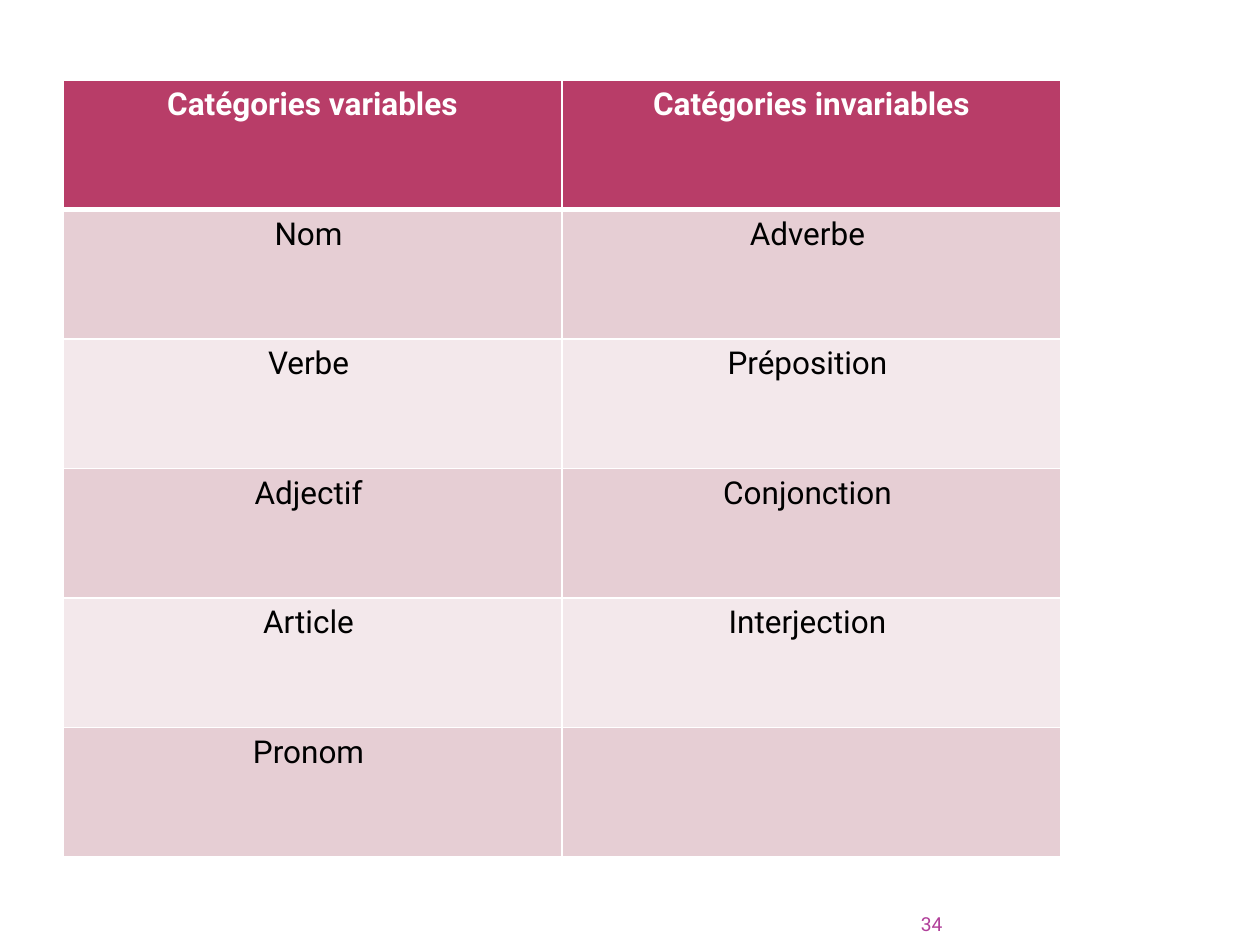
from dataclasses import dataclass

from lxml.etree import SubElement
from pptx import Presentation
from pptx.dml.color import RGBColor
from pptx.enum.text import MSO_ANCHOR, PP_ALIGN
from pptx.oxml.ns import qn
from pptx.util import Inches, Pt

# Content
HEADINGS = ("Catégories variables", "Catégories invariables")
WORDS = [
    ("Nom ", "Adverbe "),
    ("Verbe ", "Préposition "),
    ("Adjectif ", "Conjonction "),
    ("Article ", "Interjection "),
    ("Pronom ", ""),
]
PAGE_NUMBER = "34"


@dataclass(frozen=True)
class Theme:
    font: str = "Roboto"
    header: str = "B83D68"
    bands: tuple = ("E6CED4", "F3E8EB")
    light: str = "FFFFFF"
    dark: str = "000000"
    number: str = "B13F9A"
    table_size: int = 18
    number_size: int = 11
    thin: int = 1
    thick: int = 3


THEME = Theme()

# Layout, in inches
SLIDE_SIZE = (10, 7.5)
TABLE_BOX = (0.5, 0.635, 7.92, 6.17)
NUMBER_BOX = (6.84, 7.17, 0.64, 0.25)


def write(frame, text, align, color, **font_format):
    """Put one formatted line in a text frame."""
    para = frame.paragraphs[0]
    para.alignment = align
    span = para.add_run()
    span.text = text
    span.font.color.rgb = RGBColor.from_string(color)
    for name, value in {"name": THEME.font, **font_format}.items():
        setattr(span.font, name, value)


def set_borders(cell, widths):
    """Draw the cell's edges; widths maps an edge tag to points."""
    properties = cell._tc.get_or_add_tcPr()
    for tag, width in widths.items():
        line = SubElement(properties, qn(f"a:{tag}"), w=str(Pt(width)))
        fill = SubElement(line, qn("a:solidFill"))
        SubElement(fill, qn("a:srgbClr"), val=THEME.light)


def add_category_table(page):
    rows = [HEADINGS, *WORDS]
    box = [Inches(length) for length in TABLE_BOX]
    table = page.shapes.add_table(len(rows), len(HEADINGS), *box).table
    for row_index, row in enumerate(rows):
        is_header = row_index == 0
        band = THEME.bands[(row_index - 1) % len(THEME.bands)]
        widths = {
            "lnL": THEME.thin,
            "lnR": THEME.thin,
            "lnT": THEME.thick if row_index == 1 else THEME.thin,
            "lnB": THEME.thick if is_header else THEME.thin,
        }
        for column_index, text in enumerate(row):
            cell = table.cell(row_index, column_index)
            set_borders(cell, widths)
            cell.fill.solid()
            cell.fill.fore_color.rgb = RGBColor.from_string(
                THEME.header if is_header else band)
            if text:
                write(cell.text_frame, text, PP_ALIGN.CENTER,
                      THEME.light if is_header else THEME.dark,
                      size=Pt(THEME.table_size), bold=is_header)


def add_page_number(page):
    box = page.shapes.add_textbox(*[Inches(length) for length in NUMBER_BOX])
    frame_format = {
        "word_wrap": True, "vertical_anchor": MSO_ANCHOR.BOTTOM,
        "margin_left": 0, "margin_right": 0,
        "margin_top": 0, "margin_bottom": 0,
    }
    for name, value in frame_format.items():
        setattr(box.text_frame, name, value)
    write(box.text_frame, PAGE_NUMBER, PP_ALIGN.RIGHT, THEME.number,
          size=Pt(THEME.number_size))


def main():
    deck = Presentation()
    deck.slide_width, deck.slide_height = map(Inches, SLIDE_SIZE)
    page = deck.slides.add_slide(deck.slide_layouts.get_by_name("Blank"))
    add_category_table(page)
    add_page_number(page)
    deck.save("out.pptx")


if __name__ == "__main__":
    main()
